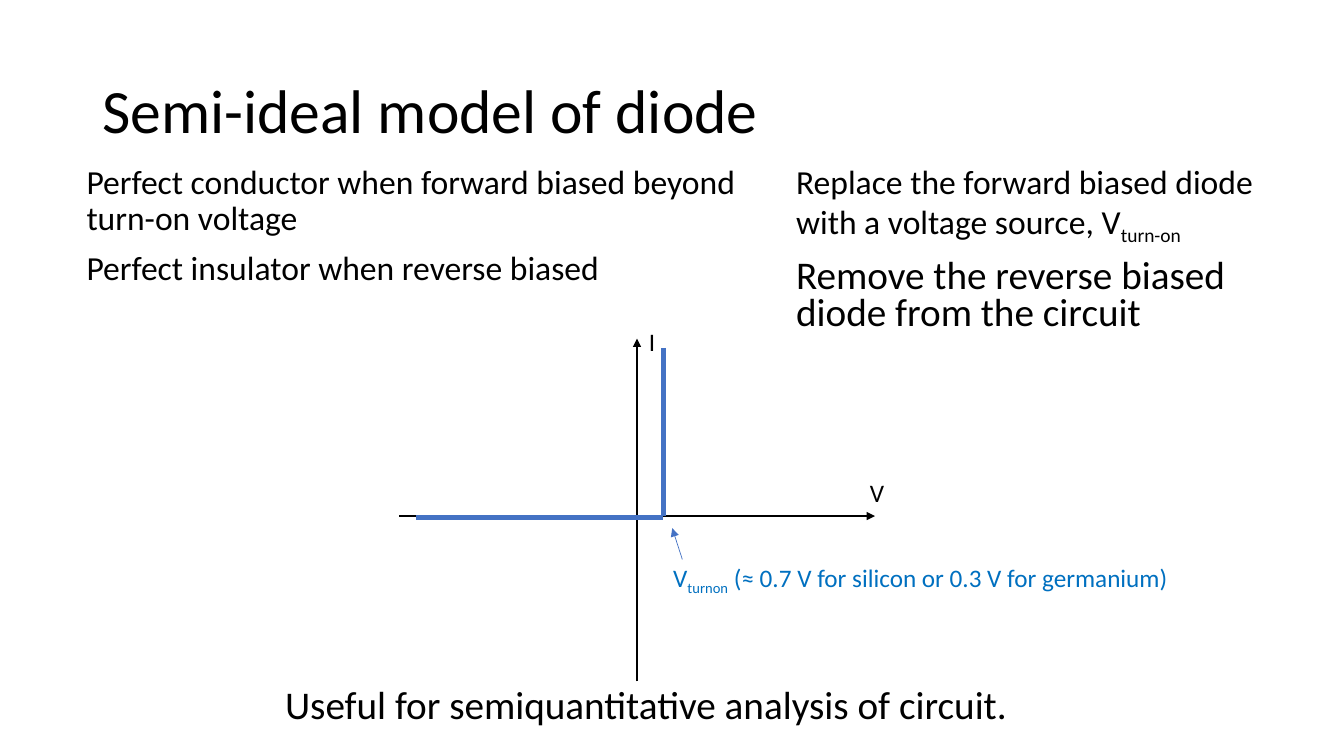
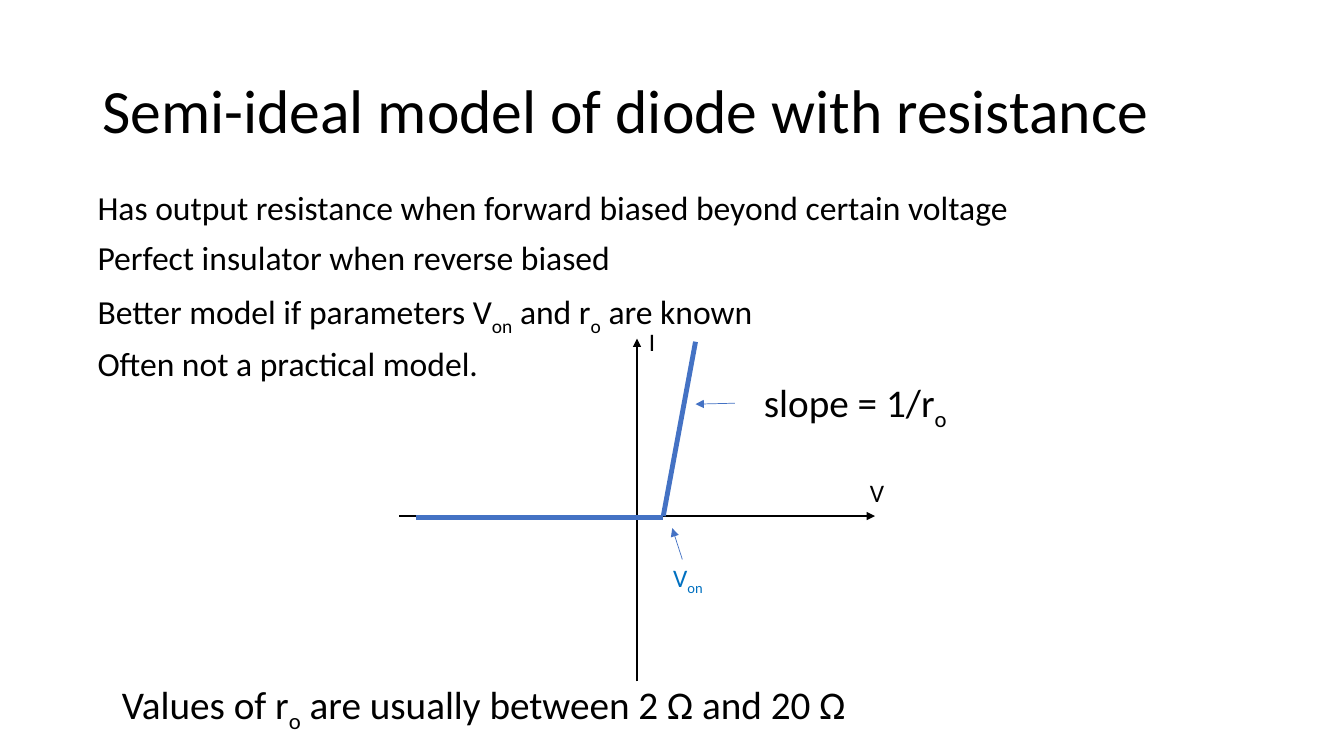
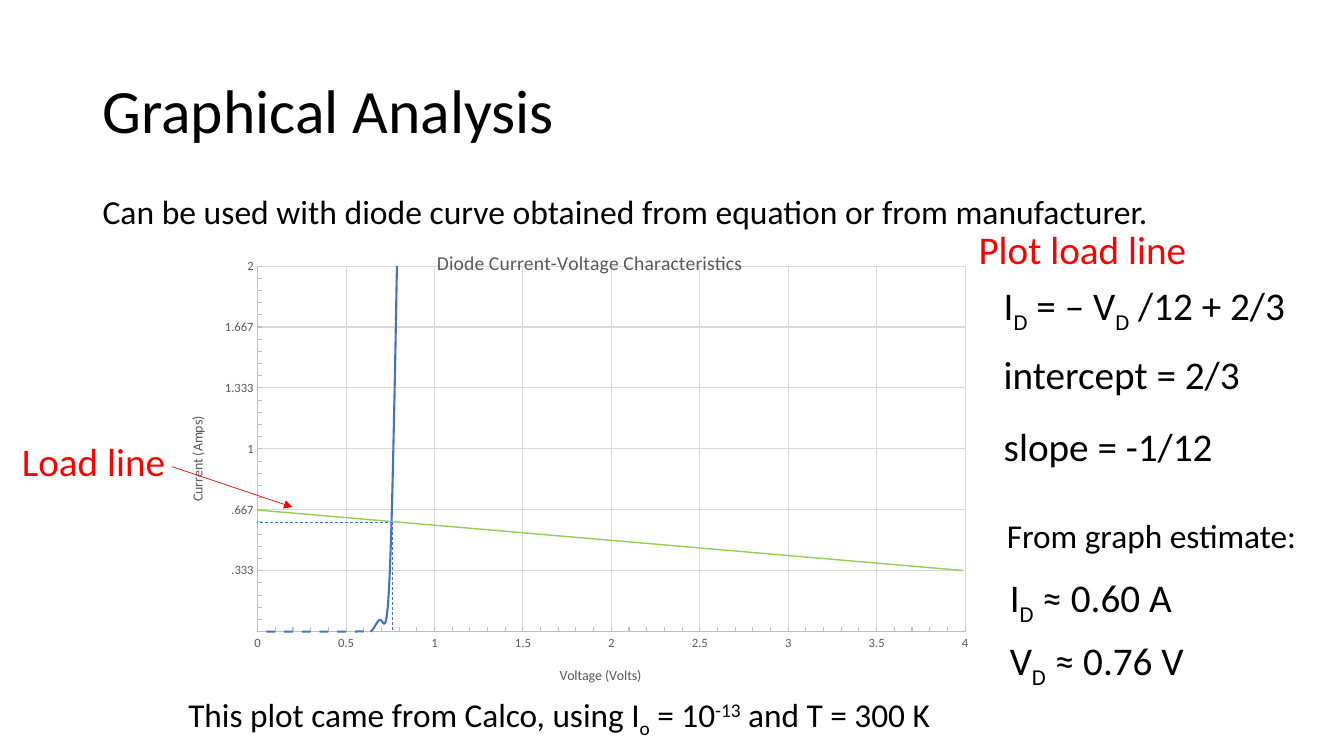
"""Build three slides on semi-ideal diode models and graphical load-line analysis."""
from lxml.etree import SubElement
from pptx import Presentation
from pptx.chart.data import XyChartData
from pptx.dml.color import RGBColor
from pptx.enum.chart import XL_CHART_TYPE as ChartType, XL_TICK_MARK as Tick
from pptx.enum.dml import MSO_LINE as Dash
from pptx.enum.shapes import MSO_CONNECTOR as Connector
from pptx.enum.text import MSO_ANCHOR as Anchor
from pptx.oxml.ns import qn
from pptx.util import Pt

FONT = "Calibri"
COLORS = {
    "text": "000000",
    "curve": "4472C4",
    "turn_on": "0070C0",
    "load": "FF0000",
    "load_plot": "92D050",
    "chart_text": "595959",
    "axis": "BFBFBF",
    "grid": "D9D9D9",
}
RGB = {role: RGBColor.from_string(value) for role, value in COLORS.items()}
BASELINES = {"_": "-25000", "^": "30000"}


def write(slide, text, left, top, width, height, size=28, color="text", spacing=0.9,
          before=10, anchor=Anchor.TOP):
    """Add text; {_x} lowers x, {^x} raises it, and each line is a paragraph."""
    frame = slide.shapes.add_textbox(Pt(left), Pt(top), Pt(width), Pt(height)).text_frame
    frame.word_wrap = True
    frame.vertical_anchor = anchor
    for number, content in enumerate(text.split("\n")):
        paragraph = frame.add_paragraph() if number else frame.paragraphs[0]
        paragraph.line_spacing = spacing
        paragraph.space_before = Pt(before)
        for piece in content.split("}"):
            plain, _, script = piece.partition("{")
            for words, baseline in ((plain, None), (script[1:], BASELINES.get(script[:1]))):
                if words:
                    run = paragraph.add_run()
                    run.text = words
                    run.font.name = FONT
                    run.font.size = Pt(size)
                    run.font.color.rgb = RGB[color]
                    if baseline:
                        run._r.get_or_add_rPr().set("baseline", baseline)


def draw(slide, start, end, color="curve", width=0.5, arrow=False, dash=None):
    """Draw a straight line, with an arrowhead at its end if asked."""
    stroke = slide.shapes.add_connector(Connector.STRAIGHT, *map(Pt, start + end))
    stroke.line.color.rgb = RGB[color]
    stroke.line.width = Pt(width)
    if dash:
        stroke.line.dash_style = dash
    properties = stroke._element.spPr
    if arrow:
        SubElement(properties.find(qn("a:ln")), qn("a:tailEnd"), type="triangle")
    SubElement(properties, qn("a:effectLst"))


deck = Presentation()
deck.slide_width, deck.slide_height = Pt(960), Pt(540)
titles = ("Semi-ideal model of diode", "Semi-ideal model of diode with resistance",
          "Graphical Analysis")
slides = []
for title in titles:
    slide = deck.slides.add_slide(deck.slide_layouts[6])
    write(slide, title, 66, 28.8, 828, 104.4, size=44, before=0, anchor=Anchor.MIDDLE)
    slides.append(slide)
ideal, resistive, graphical = slides

write(ideal, "Perfect conductor when forward biased beyond turn-on voltage\n"
      "Perfect insulator when reverse biased", 54.7, 114.5, 517.7, 342.7, size=24)
write(resistive, "Has output resistance when forward biased beyond certain voltage\n"
      "Perfect insulator when reverse biased\n"
      "Better model if parameters V{_on} and r{_o} are known\n"
      "Often not a practical model.", 62.6, 133.2, 828, 342.7, size=24)

knee = (473.8, 368.6)
models = (
    (ideal, (473.8, 248.4), "V{_turnon} (≈ 0.7 V for silicon or 0.3 V for germanium)"),
    (resistive, (496.8, 244.1), "V{_on}"),
)
for slide, curve_top, turn_on in models:
    draw(slide, (455, 486.7), (455, 241.9), "text", 1.5, arrow=True)
    draw(slide, (285.1, 368.6), (625, 368.6), "text", 1.5, arrow=True)
    draw(slide, (297.4, 369.4), (473.8, 369.4), width=3.5)
    draw(slide, curve_top, knee, width=3.5)
    for label, left, top, width, color in (("I", 456.5, 229.7, 40.3, "text"),
                                           ("V", 614.2, 337.7, 40.3, "text"),
                                           (turn_on, 473.8, 398.2, 374.4, "turn_on")):
        write(slide, label, left, top, width, 28.8, size=18, color=color, spacing=1, before=0)
    draw(slide, (487.4, 399.6), (480.2, 377.3), arrow=True)

write(ideal, "Replace the forward biased diode with a voltage source, V{_turn-on}",
      561.6, 114.5, 383.8, 66.2, size=24)
write(ideal, "Remove the reverse biased diode from the circuit",
      561.6, 181.4, 383.8, 66.2, spacing=0.8)
write(ideal, "Useful for semiquantitative analysis of circuit.", 196.6, 486, 631.4, 42.5)

write(resistive, "slope = 1/r{_o}", 538.6, 270, 148.3, 35.3, spacing=0.8)
draw(resistive, (524.9, 288), (496.8, 288.7), arrow=True)
write(resistive, "Values of r{_o} are usually between 2 Ω and 20 Ω", 79.9, 483.1, 547.9, 38.9)

write(graphical, "Can be used with diode curve obtained from equation or from manufacturer.",
      66.2, 136.1, 828, 342.7, size=24)
for step, top in (("I{_D} = – V{_D} /12 + 2/3", 198), ("intercept = 2/3", 250.6),
                  ("slope = -1/12", 301.7)):
    write(graphical, step, 709.9, top, 249.8, 38.9)

diode_data = XyChartData()
diode_curve = diode_data.add_series("Series 1")
currents = [0] * 14 + [0.01, 0.06, 0.39, 2.68]
for number, current in enumerate(currents):
    diode_curve.add_data_point(round(0.05 * (number - 1), 2), current)
chart = graphical.shapes.add_chart(ChartType.XY_SCATTER_SMOOTH_NO_MARKERS, Pt(121), Pt(162),
                                   Pt(589), Pt(342.7), diode_data).chart
chart.has_legend = False
chart.font.name = FONT
chart.font.size = Pt(10)
chart.font.color.rgb = RGB["text"]
chart.has_title = True
plot = chart.plots[0]
plot.vary_by_categories = False
curve = plot.series[0]
curve.format.line.color.rgb = RGB["curve"]
curve.format.line.width = Pt(1.5)
curve._element.find(qn("c:smooth")).set("val", "1")

voltage, ampere = chart.category_axis, chart.value_axis
for axis, maximum, step, number_format in ((voltage, 4, 0.5, "General"),
                                           (ampere, 2, 0.333333, "#.###")):
    axis.minimum_scale, axis.maximum_scale, axis.major_unit = 0, maximum, step
    axis.major_tick_mark, axis.minor_tick_mark = Tick.NONE, Tick.INSIDE
    axis.has_major_gridlines = True
    for rule, color in ((axis.format.line, "axis"), (axis.major_gridlines.format.line, "grid")):
        rule.color.rgb = RGB[color]
        rule.width = Pt(0.75)
    ticks = axis.tick_labels
    ticks.number_format, ticks.number_format_is_linked = number_format, False
    ticks.font.name, ticks.font.size = FONT, Pt(9)
    ticks.font.color.rgb = RGB["chart_text"]

for heading, words, size in ((chart.chart_title, "Diode Current-Voltage Characteristics", 14),
                             (voltage.axis_title, "Voltage (Volts)", 10),
                             (ampere.axis_title, "Current (Amps)", 10)):
    heading.text_frame.text = words
    font = heading.text_frame.paragraphs[0].runs[0].font
    font.name, font.size, font.bold = FONT, Pt(size), False
    font.color.rgb = RGB["chart_text"]
ampere.axis_title.text_frame._txBody.bodyPr.set("rot", "-5400000")

plot_area = chart._chartSpace.chart.plotArea
for parent, index, fractions in (
        (chart.chart_title._element, 1, {"x": 0.32, "y": 0.04}),
        (voltage.axis_title._element, 1, {"x": 0.47, "y": 0.91}),
        (ampere.axis_title._element, 1, {"x": 0.02, "y": 0.39}),
        (plot_area, 0, {"x": 0.107, "y": 0.082, "w": 0.858, "h": 0.762})):
    for automatic in parent.findall(qn("c:layout")):
        parent.remove(automatic)
    layout = SubElement(parent, qn("c:layout"))
    parent.insert(index, layout)
    manual = SubElement(layout, qn("c:manualLayout"))
    if parent is plot_area:
        SubElement(manual, qn("c:layoutTarget"), val="inner")
    for side in "xy":
        SubElement(manual, qn(f"c:{side}Mode"), val="edge")
    for side, fraction in fractions.items():
        SubElement(manual, qn(f"c:{side}"), val=str(fraction))

draw(graphical, (183.6, 364.3), (687.6, 407.5), "load_plot", 1)
write(graphical, "From graph estimate:", 712.1, 370.1, 229.7, 38.9, size=23.8, spacing=0.8)
for estimate, top in (("I{_D} ≈ 0.60 A", 406.8), ("V{_D} ≈ 0.76 V", 451.4)):
    write(graphical, estimate, 714.2, top, 245, 38.9)
write(graphical, "This plot came from Calco, using I{_o} = 10{^-13} and T = 300 K",
      127.4, 495.4, 576.7, 38.9, size=23.8, spacing=0.8)
draw(graphical, (280.4, 373), (183.6, 373), dash=Dash.DASH)
draw(graphical, (280.4, 373), (280.4, 450.7), dash=Dash.DASH)
write(graphical, "Load line", 8.6, 312.5, 165.6, 60.5, color="load")
draw(graphical, (123.1, 333.4), (208.8, 362.2), "load", arrow=True)
write(graphical, "Plot load line", 691.9, 161.3, 249.8, 38.9, color="load")

deck.save("out.pptx")
